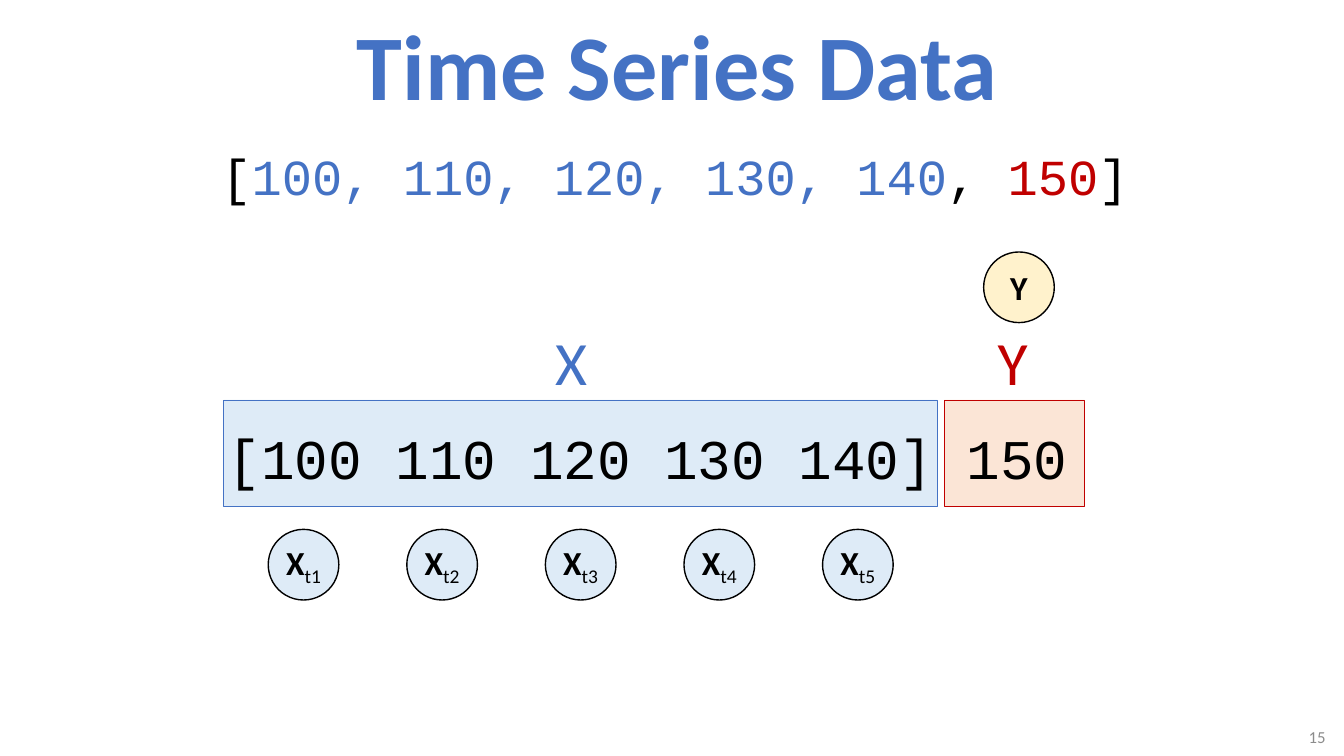
from dataclasses import dataclass

from pptx import Presentation, util as u
from pptx.dml.color import RGBColor
from pptx.enum import shapes, text


@dataclass(frozen=True)
class Theme:
    sans: str = "Calibri"
    mono: str = "Courier New"
    blue: str = "4472C4"
    red: str = "C00000"
    black: str = "000000"
    gray: str = "8C8C8C"
    pale_blue: str = "DEEBF7"
    pale_orange: str = "FBE5D6"
    pale_yellow: str = "FFF2CC"
    title_size: int = 66
    label_size: int = 44
    window_size: int = 40
    series_size: int = 36
    node_size: int = 24
    number_size: int = 12


THEME = Theme()
ALIGN = text.PP_ALIGN
MIDDLE = text.MSO_ANCHOR.MIDDLE


def set_font(font, size, name=THEME.sans, bold=False):
    font.size, font.name, font.bold = u.Pt(size), name, bold


def add_spans(para, spans):
    """Add (wording, colour) runs to a paragraph."""
    for wording, color in spans:
        span = para.add_run()
        span.text = wording
        span.font.color.rgb = RGBColor.from_string(color)


def add_text(page, box, spans, size, name=THEME.sans, bold=False,
             align=ALIGN.LEFT, anchor=text.MSO_ANCHOR.TOP, wrap=True):
    frame = page.shapes.add_textbox(*map(u.Cm, box)).text_frame
    frame.word_wrap = wrap
    frame.vertical_anchor = anchor
    if anchor != MIDDLE:
        frame.auto_size = text.MSO_AUTO_SIZE.SHAPE_TO_FIT_TEXT
    para = frame.paragraphs[0]
    para.alignment = align
    set_font(para.font, size, name, bold)
    add_spans(para, spans)


def add_panel(page, kind, box, fill, line, width):
    panel = page.shapes.add_shape(kind, *map(u.Cm, box))
    panel.shadow.inherit = False
    panel.fill.solid()
    panel.fill.fore_color.rgb = RGBColor.from_string(fill)
    panel.line.color.rgb = RGBColor.from_string(line)
    panel.line.width = u.Pt(width)
    return panel


def add_node(page, box, letter, fill, subscript=""):
    """Circle with a bold letter and an optional subscript."""
    node = add_panel(page, shapes.MSO_SHAPE.OVAL, box, fill, THEME.black, 1)
    frame = node.text_frame
    frame.margin_left = frame.margin_right = 0
    frame.margin_top = frame.margin_bottom = 0
    frame.vertical_anchor = MIDDLE
    para = frame.paragraphs[0]
    para.alignment = ALIGN.CENTER
    set_font(para.font, THEME.node_size, bold=True)
    add_spans(para, [(letter, THEME.black)])
    if subscript:
        add_spans(para, [(subscript, THEME.black)])
        span = para.runs[-1]
        span.font.bold = False
        span.font._element.set("baseline", "-25000")


def add_title(page, box):
    add_text(page, box, [("Time Series Data", THEME.blue)], THEME.title_size,
             bold=True, align=ALIGN.CENTER, anchor=MIDDLE)


def add_series(page, box):
    spans = [("[", THEME.black), ("100, 110, 120, 130, 140", THEME.blue),
             (", ", THEME.black), ("150", THEME.red), ("]", THEME.black)]
    add_text(page, box, spans, THEME.series_size, THEME.mono, wrap=False)


def add_window(page, box):
    """Input and target panels, the values across them and their labels."""
    left, top, width, height = box
    target_width, gap = 3.53, 0.18
    input_width = width - target_width - gap
    target_left = left + input_width + gap
    rectangle = shapes.MSO_SHAPE.RECTANGLE
    add_panel(page, rectangle, (target_left, top, target_width, height),
              THEME.pale_orange, THEME.red, 0.5)
    add_panel(page, rectangle, (left, top, input_width, height),
              THEME.pale_blue, THEME.blue, 0.5)
    add_text(page, (left - 0.15, top + 0.46, width + 0.36, 1.96),
             [("[100 110 120 130 140] 150", THEME.black)],
             THEME.window_size, THEME.mono)
    for letter, color, offset in (("X", THEME.blue, 8.1), ("Y", THEME.red, 19.25)):
        add_text(page, (left + offset, top - 2.03, 1.32, 2.13),
                 [(letter, color)], THEME.label_size, wrap=False)


def add_input_nodes(page, box, count=5):
    """Row of evenly spaced circles, one per time step."""
    left, top, width, size = box
    pitch = (width - size) / (count - 1)
    for step in range(count):
        add_node(page, (left + step * pitch, top, size, size),
                 "X", THEME.pale_blue, f"t{step + 1}")


def add_page_number(page, box):
    add_text(page, box, [("15", THEME.gray)], THEME.number_size,
             align=ALIGN.RIGHT, anchor=MIDDLE)


def main():
    deck = Presentation()
    deck.slide_width, deck.slide_height = u.Cm(33.87), u.Cm(19.05)
    page = deck.slides.add_slide(deck.slide_layouts[6])

    # Heading and full series
    add_title(page, (5.64, 0, 22.86, 3.18))
    add_series(page, (5.33, 3.53, 23.62, 1.8))

    # Input window and target
    add_window(page, (5.64, 10.08, 21.69, 2.67))
    add_input_nodes(page, (6.76, 13.34, 15.75, 1.78))
    add_node(page, (24.79, 6.35, 1.78, 1.78), "Y", THEME.pale_yellow)

    # Footer
    add_page_number(page, (30.99, 18.24, 2.67, 0.66))
    deck.save("out.pptx")


if __name__ == "__main__":
    main()
